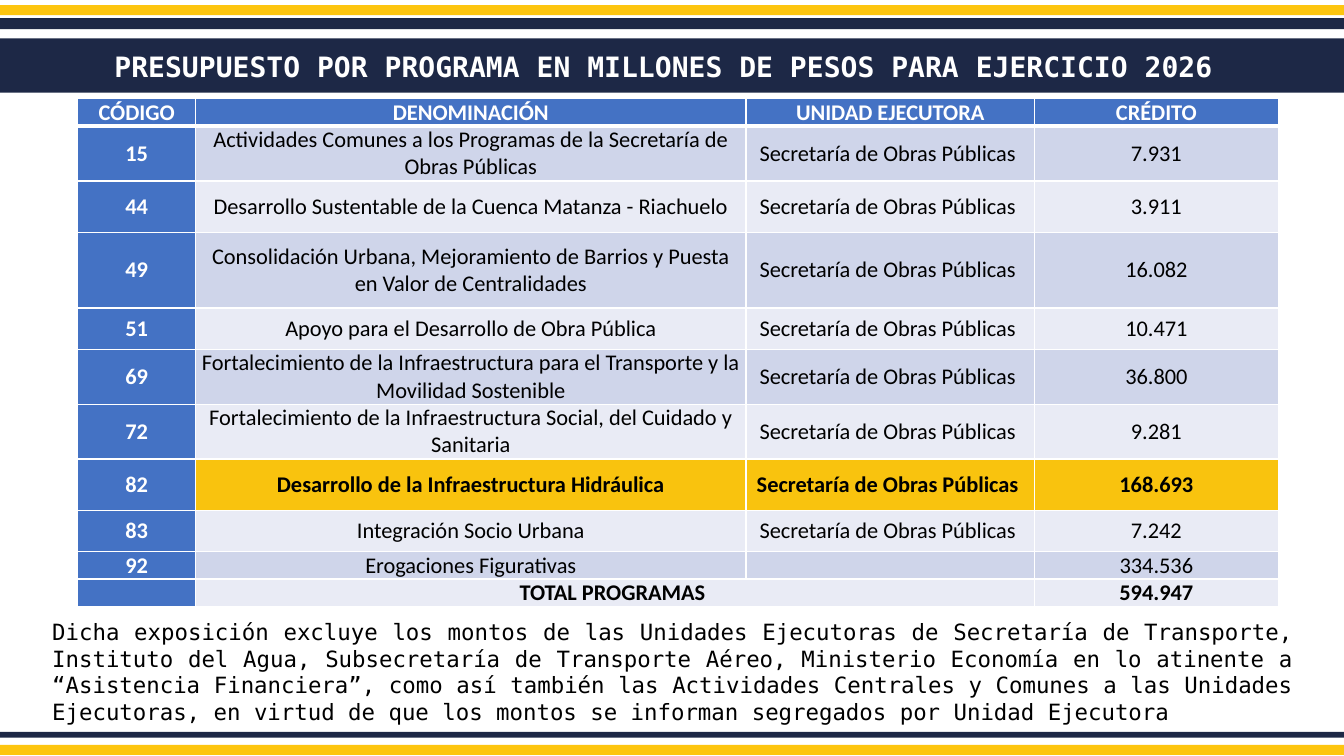
from lxml import etree
from pptx import Presentation
from pptx import util as u
from pptx.dml.color import RGBColor
from pptx.enum import shapes, text
from pptx.oxml.ns import qn

NAVY, GOLD, WHITE, BLACK = "1D2846", "FDC50F", "FFFFFF", "000000"
BLUE, HIGHLIGHT, BANDS = "4472C4", "F9C30E", ("E9EBF5", "CFD5EA")
MONO, SANS = "DejaVu Sans Mono", "Calibri"
CENTER, JUSTIFY = text.PP_ALIGN.CENTER, text.PP_ALIGN.JUSTIFY

TITLE = "PRESUPUESTO POR PROGRAMA EN MILLONES DE PESOS PARA EJERCICIO 2026 "
NOTE = (
    "Dicha exposición excluye los montos de las Unidades Ejecutoras de Secretaría "
    "de Transporte, Instituto del Agua, Subsecretaría de Transporte Aéreo, Ministerio "
    "Economía en lo atinente a “Asistencia Financiera”, como así también las "
    "Actividades Centrales y Comunes a las Unidades Ejecutoras, en virtud de que los "
    "montos se informan segregados por Unidad Ejecutora"
)
STRIPES = [
    (7.39, 0.1, GOLD),
    (0.05, 0.1, GOLD),
    (7.26, 0.06, NAVY),
    (0.18, 0.11, NAVY),
]
UNIT = "Secretaría de Obras Públicas "
HEADERS = ("CÓDIGO", "DENOMINACIÓN", "UNIDAD EJECUTORA", "CRÉDITO")
PROGRAMS = [
    ("15", "Actividades Comunes a los Programas de la Secretaría de Obras Públicas",
     UNIT, "7.931"),
    ("44", "Desarrollo Sustentable de la Cuenca Matanza - Riachuelo", UNIT, "3.911"),
    ("49", "Consolidación Urbana, Mejoramiento de Barrios y Puesta en Valor de "
     "Centralidades", UNIT, "16.082"),
    ("51", "Apoyo para el Desarrollo de Obra Pública", UNIT, "10.471"),
    ("69", "Fortalecimiento de la Infraestructura para el Transporte y la Movilidad "
     "Sostenible", UNIT, "36.800"),
    ("72", "Fortalecimiento de la Infraestructura Social, del Cuidado y Sanitaria",
     UNIT, "9.281"),
    ("82", "Desarrollo de la Infraestructura Hidráulica", UNIT, "168.693"),
    ("83", "Integración Socio Urbana", UNIT, "7.242"),
    ("92", "Erogaciones Figurativas", "", "334.536"),
]
TOTAL = ("", "TOTAL PROGRAMAS ", "", "594.947")
HIGHLIGHTED_CODE = "82"
COLUMN_WIDTHS = (1.17, 5.46, 2.86, 2.42)
ROW_HEIGHTS = (0.26, 0.51, 0.51, 0.75, 0.41, 0.51, 0.51, 0.51, 0.41, 0.26, 0.26)


def color(hex_code):
    """Turn a hex string into a colour."""
    return RGBColor.from_string(hex_code)


def paint(target, hex_code):
    """Give a shape or cell a solid fill."""
    target.fill.solid()
    target.fill.fore_color.rgb = color(hex_code)


def write(frame, words, size=16, font=SANS, ink=BLACK, bold=False, align=CENTER):
    """Put one formatted paragraph into a text frame and return it."""
    paragraph = frame.paragraphs[0]
    paragraph.alignment = align
    if words:
        run = paragraph.add_run()
        run.text = words
        run.font.size, run.font.name, run.font.bold = u.Pt(size), font, bold
        run.font.color.rgb = color(ink)
    else:
        etree.SubElement(paragraph._p, qn("a:endParaRPr"), sz=str(size * 100))
    return paragraph


def add_stripe(slide, top, height, hex_code):
    """Draw a full-width band."""
    stripe = slide.shapes.add_shape(
        shapes.MSO_SHAPE.RECTANGLE, 0, u.Inches(top), u.Inches(13.33), u.Inches(height))
    stripe.shadow.inherit = False
    stripe.line.fill.background()
    paint(stripe, hex_code)


def set_title(slide):
    """Turn the title placeholder into the navy heading band."""
    heading = slide.shapes.title
    heading.left, heading.top = u.Inches(0), u.Inches(0.38)
    heading.width, heading.height = u.Inches(13.33), u.Inches(0.54)
    paint(heading, NAVY)
    frame = heading.text_frame
    frame.auto_size = text.MSO_AUTO_SIZE.NONE
    frame.vertical_anchor = text.MSO_ANCHOR.MIDDLE
    paragraph = write(frame, TITLE, size=20, font=MONO, ink=WHITE, bold=True)
    paragraph.line_spacing = 1.07
    paragraph.space_after = u.Pt(8)


def set_borders(cell, bottom):
    """Outline a cell in white with the given bottom width in points."""
    properties = cell._tc.get_or_add_tcPr()
    for side, width in (("L", 1), ("R", 1), ("T", 1), ("B", bottom)):
        edge = etree.SubElement(properties, qn("a:ln" + side), w=str(u.Pt(width)))
        solid = etree.SubElement(edge, qn("a:solidFill"))
        etree.SubElement(solid, qn("a:srgbClr"), val=WHITE)


def fill_cell(cell, words, background, ink, bold, bottom):
    """Write and format one table cell."""
    cell.margin_left = cell.margin_right = u.Inches(0.05)
    cell.margin_top = cell.margin_bottom = 0
    cell.vertical_anchor = text.MSO_ANCHOR.MIDDLE
    set_borders(cell, bottom)
    paint(cell, background)
    write(cell.text_frame, words, ink=ink, bold=bold)


def add_budget_table(slide):
    """Build the budget table with its header, programs and total."""
    entries = [HEADERS, *PROGRAMS, TOTAL]
    budget = slide.shapes.add_table(
        len(entries), len(HEADERS), u.Inches(0.77), u.Inches(0.98),
        u.Inches(sum(COLUMN_WIDTHS)), u.Inches(sum(ROW_HEIGHTS))).table
    for column, width in zip(budget.columns, COLUMN_WIDTHS):
        column.width = u.Inches(width)
    for row, height in zip(budget.rows, ROW_HEIGHTS):
        row.height = u.Inches(height)
    for r, entry in enumerate(entries):
        highlighted = entry[0] == HIGHLIGHTED_CODE
        band = HIGHLIGHT if highlighted else BANDS[r % 2]
        for c, words in enumerate(entry):
            label = r == 0 or c == 0
            fill_cell(
                budget.cell(r, c), words,
                background=BLUE if label else band,
                ink=WHITE if label else BLACK,
                bold=label or highlighted or entry is TOTAL,
                bottom=3 if r == 0 else 1)
    last = len(entries) - 1
    budget.cell(last, 1).merge(budget.cell(last, 2))


def add_note(slide):
    """Add the explanatory note under the table."""
    note = slide.shapes.add_textbox(
        u.Inches(0.42), u.Inches(6.08), u.Inches(12.5), u.Inches(1.18))
    note.text_frame.word_wrap = True
    note.text_frame.auto_size = text.MSO_AUTO_SIZE.SHAPE_TO_FIT_TEXT
    write(note.text_frame, NOTE, font=MONO, align=JUSTIFY)


def main():
    """Build and save the budget slide."""
    deck = Presentation()
    deck.slide_width, deck.slide_height = u.Inches(13.33), u.Inches(7.5)
    slide = deck.slides.add_slide(deck.slide_layouts.get_by_name("Title Only"))
    for top, height, hex_code in STRIPES:
        add_stripe(slide, top, height, hex_code)
    set_title(slide)
    add_budget_table(slide)
    add_note(slide)
    deck.save("out.pptx")


if __name__ == "__main__":
    main()
